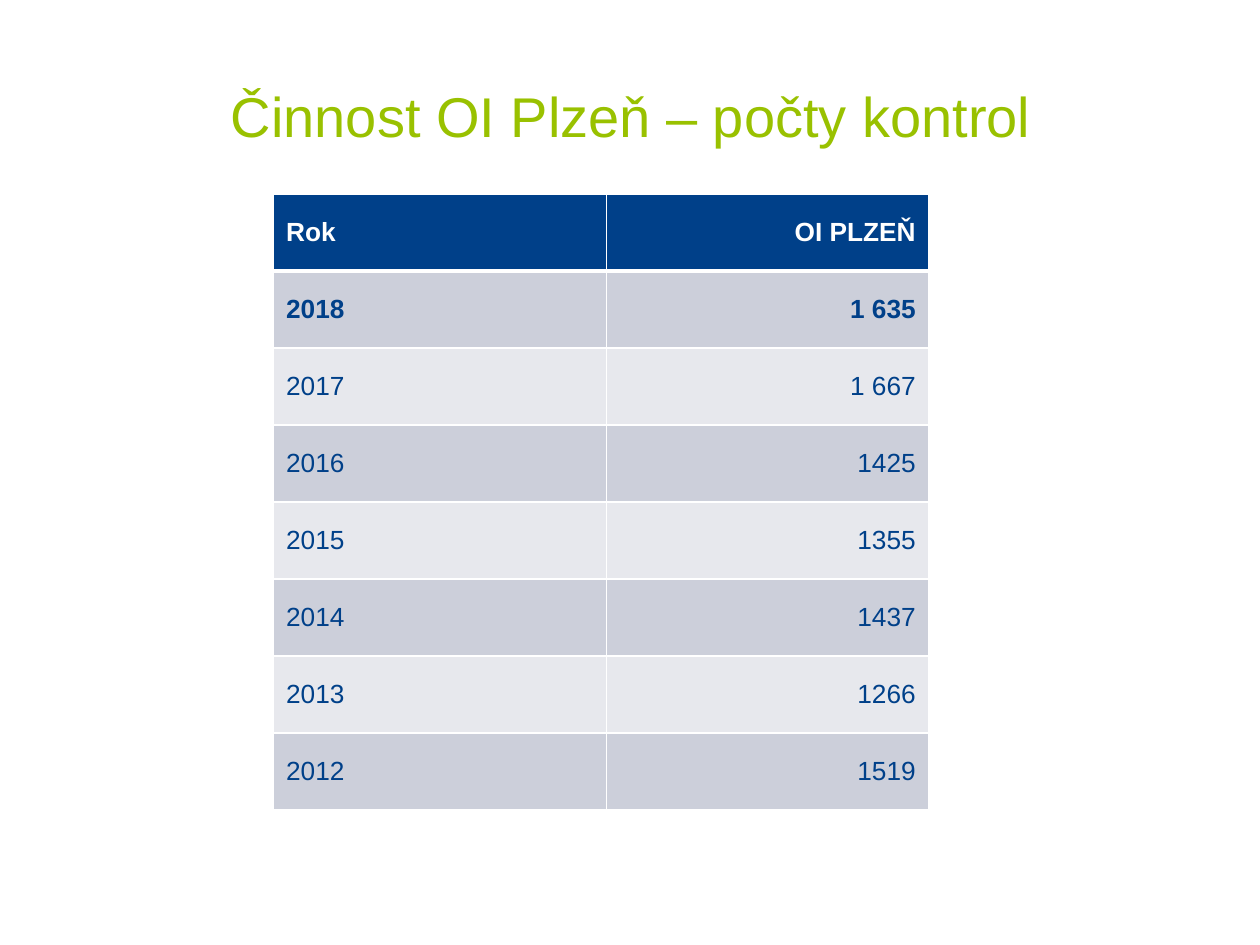
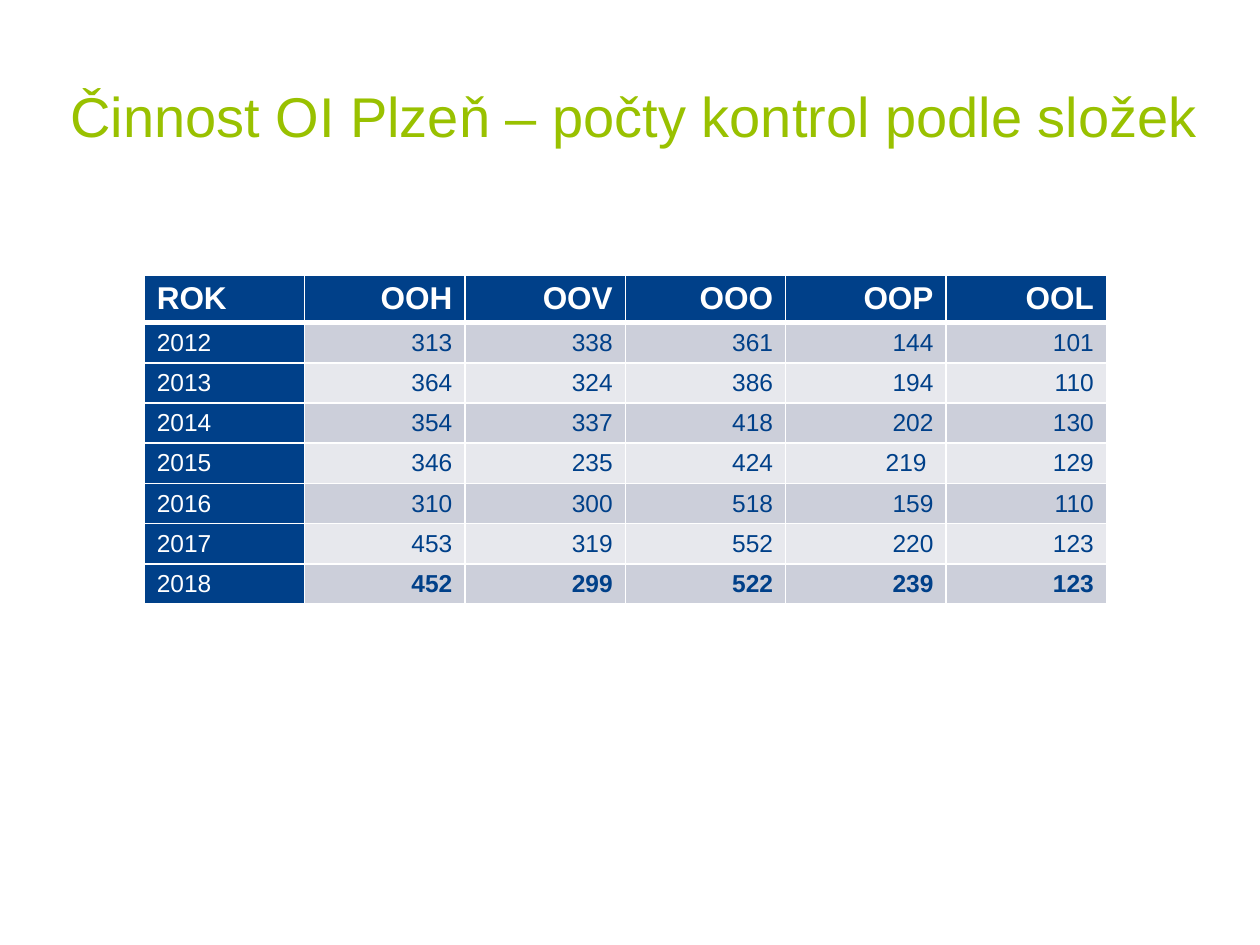
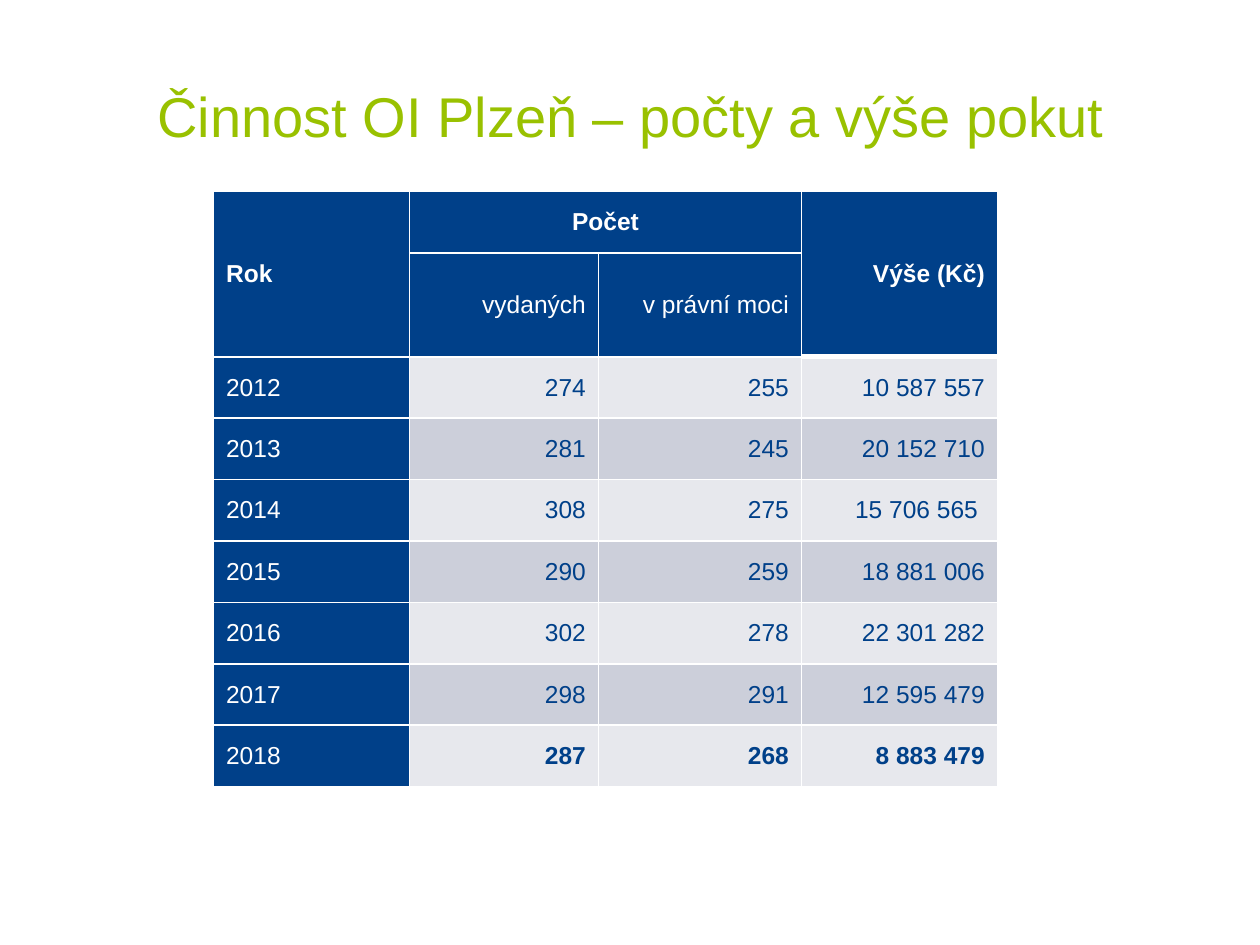
import pptx
import pptx.dml.color
import pptx.enum.text
import pptx.oxml
import pptx.oxml.ns
import pptx.util

Pt = pptx.util.Pt
RGB = pptx.dml.color.RGBColor.from_string
ALIGN = pptx.enum.text.PP_ALIGN
MIDDLE = pptx.enum.text.MSO_ANCHOR.MIDDLE

COLORS = {"title": "99C100", "navy": "004089", "white": "FFFFFF",
          "band_odd": "CCCFDA", "band_even": "E7E8ED"}
FONT = "Arial"
WIDE_TITLE = (31, 21, 663, 90)
TITLE = (36.7, 21, 648, 90)

# Content: merges are (row, column, last row, last column)
SLIDES = [
    {"title": "Činnost OI Plzeň – počty kontrol", "title_box": TITLE,
     "at": (156.3, 110.9), "cols": [190.4, 183.8], "heights": [44] * 8,
     "head_rows": 1, "head_cols": 0, "head_size": 15, "size": 15,
     "merges": [], "thick": [(0, 0), (0, 1)],
     "rows": [
         ("Rok", "OI PLZEŇ"),
         ("2018", "1 635"),
         ("2017", "1 667"),
         ("2016", "1425"),
         ("2015", "1355"),
         ("2014", "1437"),
         ("2013", "1266"),
         ("2012", "1519")]},
    {"title": "Činnost OI Plzeň – počty kontrol podle složek", "title_box": WIDE_TITLE,
     "at": (82.4, 157), "cols": [91.65] * 6, "heights": [21.6] * 8,
     "head_rows": 1, "head_cols": 1, "head_size": 18, "size": 14,
     "merges": [], "thick": [(0, c) for c in range(6)],
     "rows": [
         ("ROK", "OOH", "OOV", "OOO", "OOP", "OOL"),
         ("2012", "313", "338", "361", "144", "101"),
         ("2013", "364", "324", "386", "194", "110"),
         ("2014", "354", "337", "418", "202", "130"),
         ("2015", "346", "235", "424", "219 ", "129"),
         ("2016", "310", "300", "518", "159", "110"),
         ("2017", "453", "319", "552", "220", "123"),
         ("2018", "452", "299", "522", "239", "123")]},
    {"title": "Činnost OI Plzeň – počty a výše pokut", "title_box": TITLE,
     "at": (122, 109.4), "cols": [112, 108, 116, 112],
     "heights": [35.1, 59.4] + [35.1] * 7,
     "head_rows": 2, "head_cols": 1, "head_size": 14, "size": 14,
     "merges": [(0, 0, 1, 0), (0, 1, 0, 2), (0, 3, 1, 3)],
     "thick": [(0, 3), (1, 3)],
     "rows": [
         ("Rok", "Počet", "", "Výše (Kč)"),
         ("", "vydaných", "v právní moci", ""),
         ("2012", "274", "255", "10 587 557"),
         ("2013", "281", "245", "20 152 710"),
         ("2014", "308", "275", "15 706 565 "),
         ("2015", "290", "259", "18 881 006"),
         ("2016", "302", "278", "22 301 282"),
         ("2017", "298", "291", "12 595 479"),
         ("2018", "287", "268", "8 883 479")]},
]


def write(tf, text, align, color, **font):
    """Fill a text frame with one formatted paragraph."""
    p = tf.paragraphs[0]
    p.alignment = align
    r = p.add_run()
    r.text = text
    for name, value in {"name": FONT, **font}.items():
        setattr(r.font, name, value)
    r.font.color.rgb = RGB(COLORS[color])


def set_borders(cell, **widths):
    """Draw white cell edges, given as side=points."""
    for side, width in widths.items():
        cell._tc.get_or_add_tcPr().append(pptx.oxml.parse_xml(
            f'<a:ln{side} {pptx.oxml.ns.nsdecls("a")} w="{Pt(width)}">'
            f'<a:solidFill><a:srgbClr val="{COLORS["white"]}"/></a:solidFill></a:ln{side}>'))


def add_title(s, data):
    sp = s.shapes.title
    for name, value in zip(("left", "top", "width", "height"), data["title_box"]):
        setattr(sp, name, Pt(value))
    tf = sp.text_frame
    for name, value in {"word_wrap": True, "vertical_anchor": MIDDLE,
                        "auto_size": pptx.enum.text.MSO_AUTO_SIZE.NONE}.items():
        setattr(tf, name, value)
    write(tf, data["title"], ALIGN.CENTER, "title", size=Pt(32), bold=False)


def add_table(s, data):
    rows, cols, heights = data["rows"], data["cols"], data["heights"]
    size = [Pt(sum(cols)), Pt(sum(heights))]
    table = s.shapes.add_table(len(rows), len(cols), *map(Pt, data["at"]), *size).table
    for column, width in zip(table.columns, cols):
        column.width = Pt(width)
    for row, height in zip(table.rows, heights):
        row.height = Pt(height)
    for r1, c1, r2, c2 in data["merges"]:
        table.cell(r1, c1).merge(table.cell(r2, c2))

    for i, row in enumerate(rows):
        for j, text in enumerate(row):
            cell = table.cell(i, j)
            in_head = i < data["head_rows"]
            is_navy = in_head or j < data["head_cols"]
            set_borders(cell, L=1, R=1, T=3 if (i - 1, j) in data["thick"] else 1,
                        B=3 if (i, j) in data["thick"] else 1)
            fill = "navy" if is_navy else "band_odd" if i % 2 else "band_even"
            cell.fill.solid()
            cell.fill.fore_color.rgb = RGB(COLORS[fill])
            cell.vertical_anchor = MIDDLE
            if not text:
                continue
            # Top heading and the 2018 figures stand out in bold
            bold = i == 0 or (row[0] == "2018" and not is_navy)
            spans_columns = cell.is_merge_origin and cell.span_width > 1
            align = ALIGN.CENTER if spans_columns else ALIGN.RIGHT if j else ALIGN.LEFT
            write(cell.text_frame, text, align, "white" if is_navy else "navy",
                  size=Pt(data["head_size" if in_head else "size"]), bold=bold)


def main():
    prs = pptx.Presentation()
    prs.slide_width, prs.slide_height = Pt(720), Pt(540)
    for data in SLIDES:
        s = prs.slides.add_slide(prs.slide_layouts[5])
        add_title(s, data)
        add_table(s, data)
    prs.save("out.pptx")


if __name__ == "__main__":
    main()
